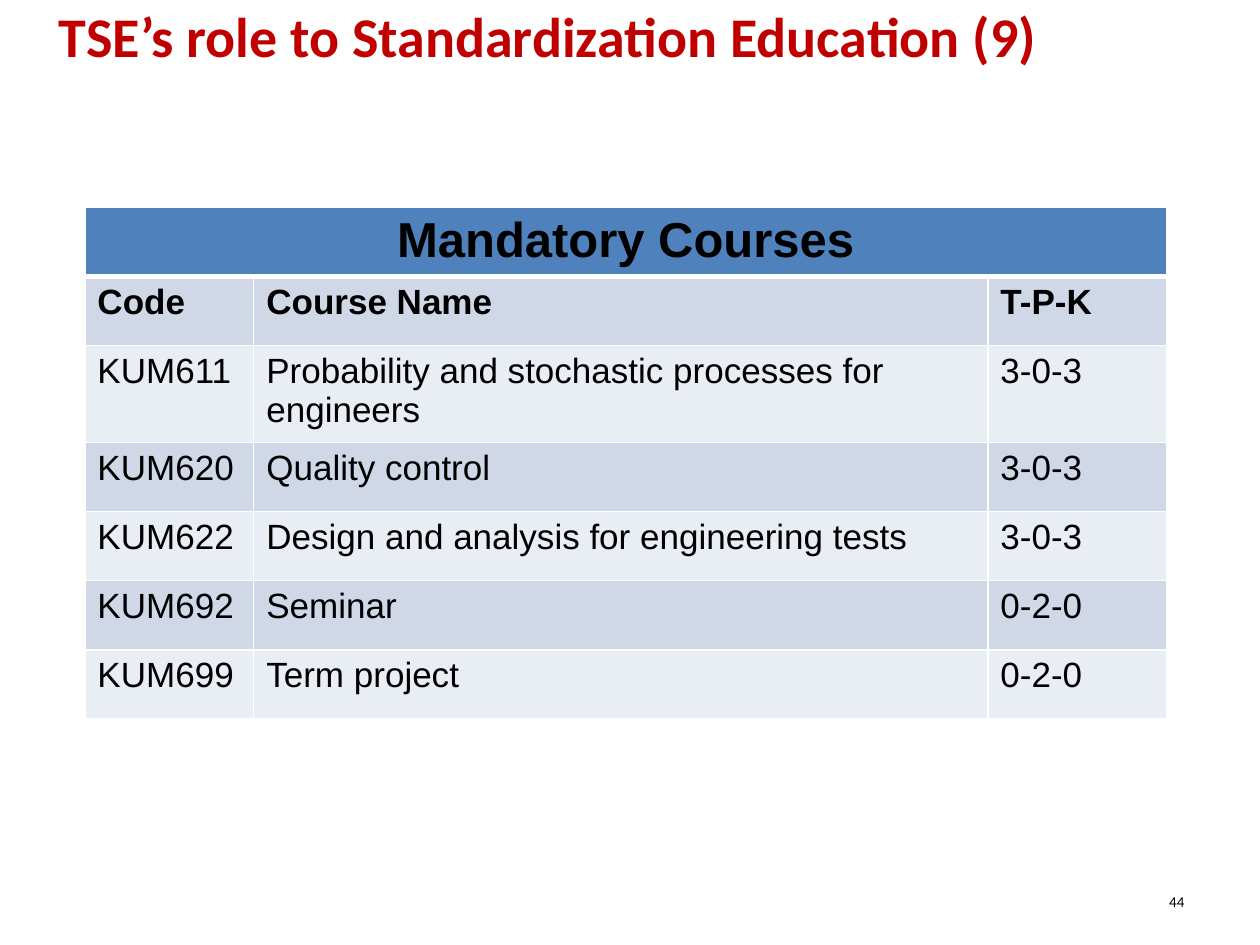
from dataclasses import dataclass

from lxml import etree
from pptx import Presentation
from pptx.dml.color import RGBColor
from pptx.enum.text import MSO_ANCHOR, MSO_AUTO_SIZE, PP_ALIGN
from pptx.oxml.ns import qn
from pptx.util import Pt

LEFT, MID, RIGHT = PP_ALIGN.LEFT, PP_ALIGN.CENTER, PP_ALIGN.RIGHT
TOP, CENTER = MSO_ANCHOR.TOP, MSO_ANCHOR.MIDDLE
NO_FIT = MSO_AUTO_SIZE.NONE
WHITE, BLACK, RED = "FFFFFF", "000000", "C00000"
BLUE, BANDS = "4F81BD", ("D0D8E8", "E9EDF4")
WIDTHS = (96.5, 419.5, 102)
ROW, TALL = 39.5, 55.4


@dataclass
class Style:
    size: float
    face: str = "Arial"
    color: str = BLACK
    bold: bool = False
    align: int = LEFT


@dataclass
class Line:
    code: str
    name: str
    hours: str
    bold: bool = False
    height: float = ROW


LINES = [
    Line("Code", "Course Name", "T-P-K", bold=True),
    Line("KUM611", "Probability and stochastic processes for engineers",
         "3-0-3", height=TALL),
    Line("KUM620", "Quality control", "3-0-3"),
    Line("KUM622", "Design and analysis for engineering tests", "3-0-3"),
    Line("KUM692", "Seminar", "0-2-0"),
    Line("KUM699", "Term project", "0-2-0"),
]


def paint(hue: str) -> RGBColor:
    return RGBColor.from_string(hue)


def assign(item, values: dict) -> None:
    for key, value in values.items():
        setattr(item, key, value)


def write(frame, text: str, style: Style) -> None:
    para = frame.paragraphs[0]
    para.alignment = style.align
    run = para.add_run()
    run.text = text
    assign(run.font, {"name": style.face, "size": Pt(style.size),
                      "bold": style.bold})
    run.font.color.rgb = paint(style.color)


def place(shape, box: tuple, anchor: int) -> None:
    spots = zip(("left", "top", "width", "height"), map(Pt, box))
    assign(shape, dict(spots))
    assign(shape.text_frame, {
        "word_wrap": True, "auto_size": NO_FIT, "vertical_anchor": anchor,
        "margin_left": Pt(7.2), "margin_right": Pt(7.2),
        "margin_top": Pt(3.6), "margin_bottom": Pt(3.6)})


def edge(cell, base: float) -> None:
    props = cell._tc.get_or_add_tcPr()
    sides = {"lnL": 1, "lnR": 1, "lnT": 1, "lnB": base}
    for index, (side, width) in enumerate(sides.items()):
        line = etree.Element(qn(f"a:{side}"), w=str(Pt(width)))
        fill = etree.SubElement(line, qn("a:solidFill"))
        etree.SubElement(fill, qn("a:srgbClr"), val=WHITE)
        props.insert(index, line)


def fill_cell(cell, text: str, hue: str, style: Style, base: float = 1) -> None:
    cell.fill.solid()
    cell.fill.fore_color.rgb = paint(hue)
    edge(cell, base)
    if text:
        write(cell.text_frame, text, style)


def add_grid(slide) -> None:
    heights = [ROW] + [line.height for line in LINES]
    grid = slide.shapes.add_table(
        len(heights), len(WIDTHS), Pt(48.5), Pt(118.5),
        Pt(sum(WIDTHS)), Pt(sum(heights))).table
    for column, width in zip(grid.columns, WIDTHS):
        column.width = Pt(width)
    for row, height in zip(grid.rows, heights):
        row.height = Pt(height)
    head = Style(28, bold=True, align=MID)
    for index, text in enumerate(("Mandatory Courses", "", "")):
        fill_cell(grid.cell(0, index), text, BLUE, head, 3)
    grid.cell(0, 0).merge(grid.cell(0, len(WIDTHS) - 1))
    for index, line in enumerate(LINES):
        style = Style(20, bold=line.bold)
        for column, text in enumerate((line.code, line.name, line.hours)):
            fill_cell(grid.cell(index + 1, column), text,
                      BANDS[index % 2], style)


def main() -> None:
    deck = Presentation()
    assign(deck, {"slide_width": Pt(720), "slide_height": Pt(540)})
    slide = deck.slides.add_slide(deck.slide_layouts[5])
    title = slide.shapes.title
    place(title, (26.5, -3, 657.5, 46), TOP)
    write(title.text_frame, "TSE’s role to Standardization Education (9)",
          Style(32, "Calibri", RED, True))
    number = slide.shapes.add_textbox(0, 0, 0, 0)
    place(number, (598.5, 500.5, 85.5, 28.8), CENTER)
    write(number.text_frame, "44", Style(8.6, "Calibri", align=RIGHT))
    add_grid(slide)
    deck.save("out.pptx")


if __name__ == "__main__":
    main()
